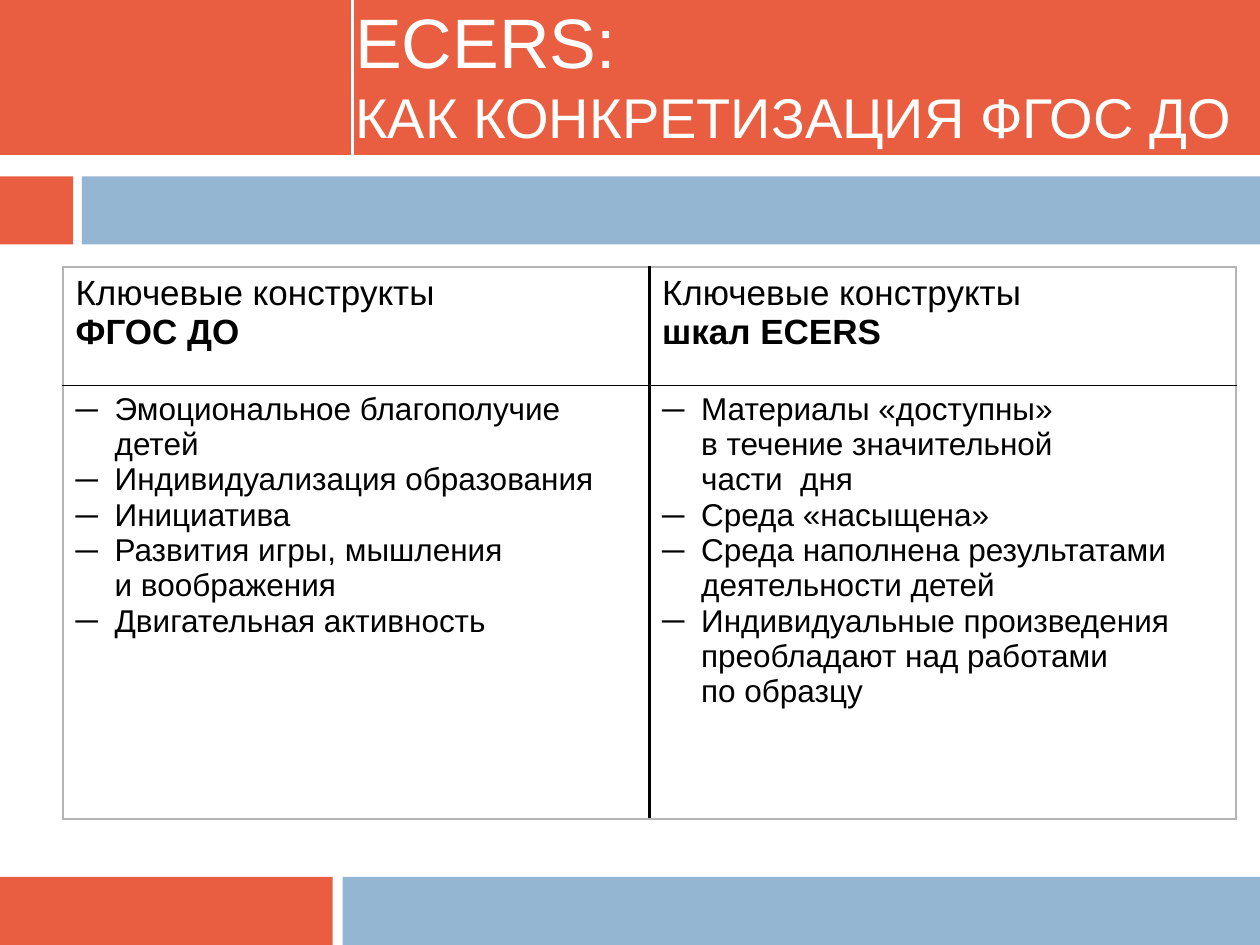
import copy

import pptx
import pptx.dml.color
import pptx.enum.shapes
import pptx.enum.text
import pptx.oxml
import pptx.oxml.ns
import pptx.util
from lxml import etree

RGBColor = pptx.dml.color.RGBColor
ORANGE = RGBColor(0xE9, 0x5E, 0x40)
BLUE = RGBColor(0x94, 0xB6, 0xD2)
WHITE = RGBColor(0xFF, 0xFF, 0xFF)
BLACK = RGBColor(0, 0, 0)
GREY = RGBColor(0xB4, 0xB4, 0xB4)

FONT = "Arial"
COLUMNS, ROWS = 100, 75  # layout grid over the whole slide
TITLE_ONLY = 5

HEADINGS = [
    ("Ключевые конструкты \n", "ФГОС ДО"),
    ("Ключевые конструкты \n", "шкал ECERS"),
]
CONSTRUCTS = [
    [
        "Эмоциональное благополучие детей",
        "Индивидуализация образования",
        "Инициатива",
        "Развития игры, мышления \nи воображения",
        "Двигательная активность",
    ],
    [
        "Материалы «доступны» \nв течение значительной \nчасти  дня",
        "Среда «насыщена»",
        "Среда наполнена результатами деятельности детей",
        "Индивидуальные произведения преобладают над работами \nпо образцу",
    ],
]


def write(paragraph, text, size=18, color=BLACK, bold=False):
    """Add text to a paragraph; each newline becomes a line break."""
    for number, line in enumerate(text.split("\n")):
        if number:
            paragraph.add_line_break()
            line_break = paragraph._p[-1]
            line_break.append(copy.deepcopy(run._r.rPr))
        if line or not number:
            run = paragraph.add_run()
            run.text = line
            run.font.name = FONT
            run.font.size = pptx.util.Pt(size)
            run.font.bold = bold
            run.font.color.rgb = color


def add_dash(paragraph, indent=0.31):
    """Give a paragraph a dash bullet with a hanging indent."""
    properties = paragraph._p.get_or_add_pPr()
    offset = pptx.util.Inches(indent)
    properties.set("marL", str(offset))
    properties.set("indent", str(-offset))
    etree.SubElement(properties, pptx.oxml.ns.qn("a:buFont"), typeface=FONT)
    etree.SubElement(properties, pptx.oxml.ns.qn("a:buChar"), char="─")


def set_borders(cell, **sides):
    """Draw cell borders; sides map L, R, T, B to (color, width)."""
    properties = cell._tc.get_or_add_tcPr()
    for position, side in enumerate("LRTB"):
        color, width = sides[side]
        properties.insert(position, pptx.oxml.parse_xml(
            f'<a:ln{side} {pptx.oxml.ns.nsdecls("a")} w="{pptx.util.Pt(width)}">'
            f'<a:solidFill><a:srgbClr val="{color}"/></a:solidFill></a:ln{side}>'))


class SlideBuilder:
    def __init__(self, presentation):
        self.width = presentation.slide_width
        self.height = presentation.slide_height
        layout = presentation.slide_layouts[TITLE_ONLY]
        self.slide = presentation.slides.add_slide(layout)

    def x(self, columns):
        return round(self.width * columns / COLUMNS)

    def y(self, rows):
        return round(self.height * rows / ROWS)

    def box(self, left, top, width, height):
        return self.x(left), self.y(top), self.x(width), self.y(height)

    def band(self, color, *place):
        band = self.slide.shapes.add_shape(
            pptx.enum.shapes.MSO_SHAPE.RECTANGLE, *self.box(*place))
        band.shadow.inherit = False
        band.fill.solid()
        band.fill.fore_color.rgb = color
        band.line.fill.background()

    def split_band(self, top, height, orange_end, blue_start):
        self.band(ORANGE, 0, top, orange_end, height)
        self.band(BLUE, blue_start, top, COLUMNS - blue_start, height)

    def divider(self, column, top, bottom):
        divider = self.slide.shapes.add_connector(
            pptx.enum.shapes.MSO_CONNECTOR.STRAIGHT,
            self.x(column), self.y(top), self.x(column), self.y(bottom))
        divider.line.color.rgb = WHITE
        divider.line.width = pptx.util.Pt(1.5)
        etree.SubElement(divider._element.spPr, pptx.oxml.ns.qn("a:effectLst"))

    def title(self, parts, *place):
        title = self.slide.shapes.title
        title.left, title.top, title.width, title.height = self.box(*place)
        frame = title.text_frame
        frame.word_wrap = True
        frame.auto_size = pptx.enum.text.MSO_AUTO_SIZE.NONE
        frame.vertical_anchor = pptx.enum.text.MSO_ANCHOR.MIDDLE
        heading = frame.paragraphs[0]
        heading.alignment = pptx.enum.text.PP_ALIGN.LEFT
        for text, size in parts:
            write(heading, text, size=size, color=WHITE)
        # Bring the title in front of the bands
        self.slide.shapes._spTree.append(title._element)

    def comparison(self, headings, lists, row_heights, *place):
        table = self.slide.shapes.add_table(
            2, len(headings), *self.box(*place)).table
        table.first_row = table.horz_banding = False
        for row, height in zip(table.rows, row_heights):
            row.height = self.y(height)

        outer, rule, middle = (GREY, 1), (BLACK, 1), (BLACK, 1.5)
        last = len(headings) - 1
        for column, (heading, items) in enumerate(zip(headings, lists)):
            head, body = table.cell(0, column), table.cell(1, column)
            left = middle if column else outer
            right = middle if column < last else outer
            for cell in (head, body):
                cell.fill.background()
            set_borders(head, L=left, R=right, T=outer, B=rule)
            set_borders(body, L=left, R=right, T=rule, B=outer)

            label, subject = heading
            write(head.text_frame.paragraphs[0], label, size=20)
            write(head.text_frame.paragraphs[0], subject, size=20, bold=True)
            for number, item in enumerate(items):
                frame = body.text_frame
                entry = frame.add_paragraph() if number else frame.paragraphs[0]
                add_dash(entry)
                write(entry, item)


def main():
    presentation = pptx.Presentation()
    presentation.slide_width = pptx.util.Inches(10)
    presentation.slide_height = pptx.util.Inches(7.5)
    builder = SlideBuilder(presentation)

    # Coloured bands
    builder.split_band(69.6, 5.4, orange_end=26.4, blue_start=27.2)
    builder.band(ORANGE, 0, 0, COLUMNS, 12.3)
    builder.split_band(14, 5.4, orange_end=5.8, blue_start=6.5)
    builder.divider(28, 0, 12.3)

    # Title
    builder.title([("ECERS: \n", 40), ("КАК КОНКРЕТИЗАЦИЯ ФГОС ДО", 32)],
                  27.2, 0.5, 72.8, 10.8)

    # Comparison of key constructs
    builder.comparison(HEADINGS, CONSTRUCTS, (9.4, 34.4), 5, 21.2, 93.1, 43.8)

    presentation.save("out.pptx")


if __name__ == "__main__":
    main()
